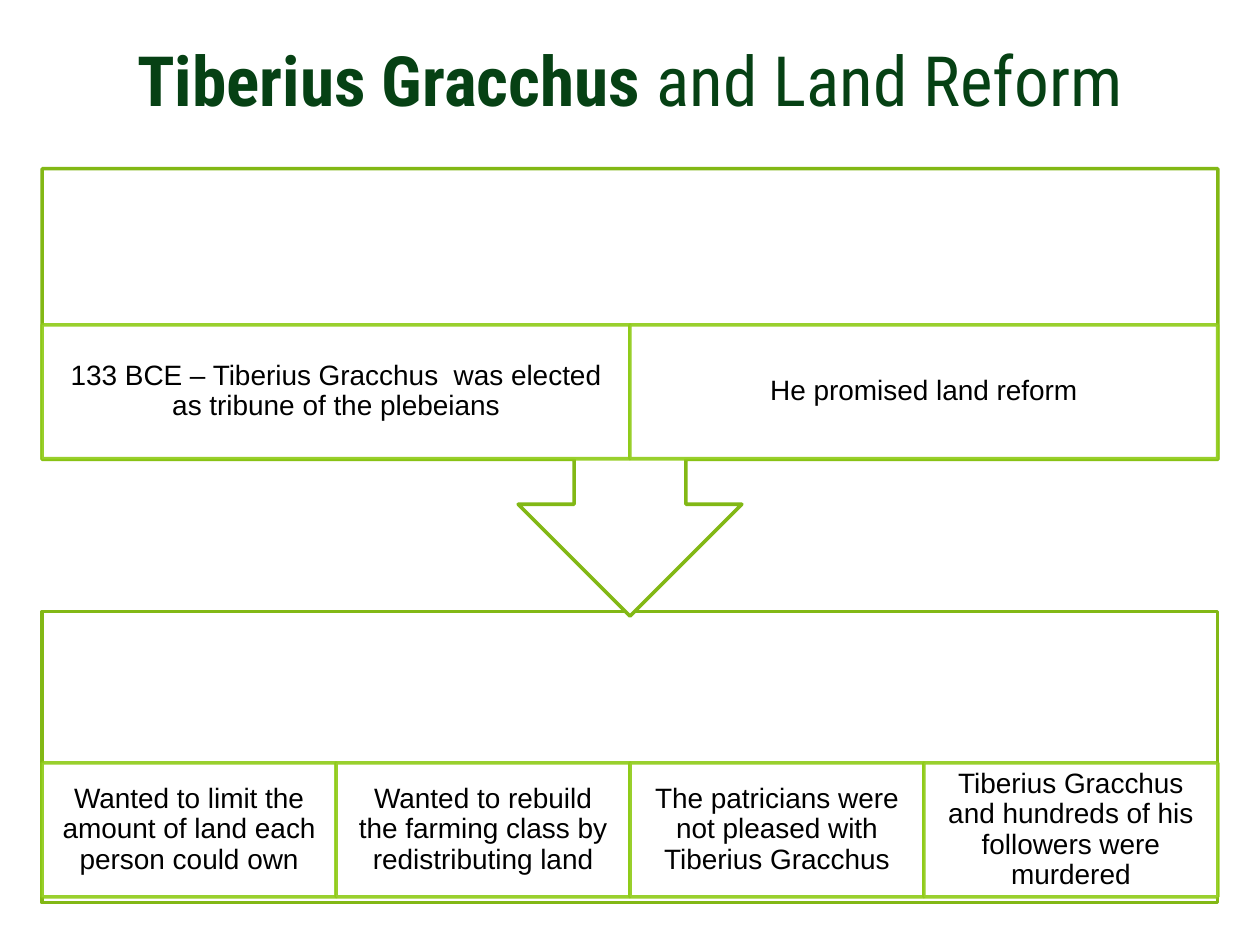
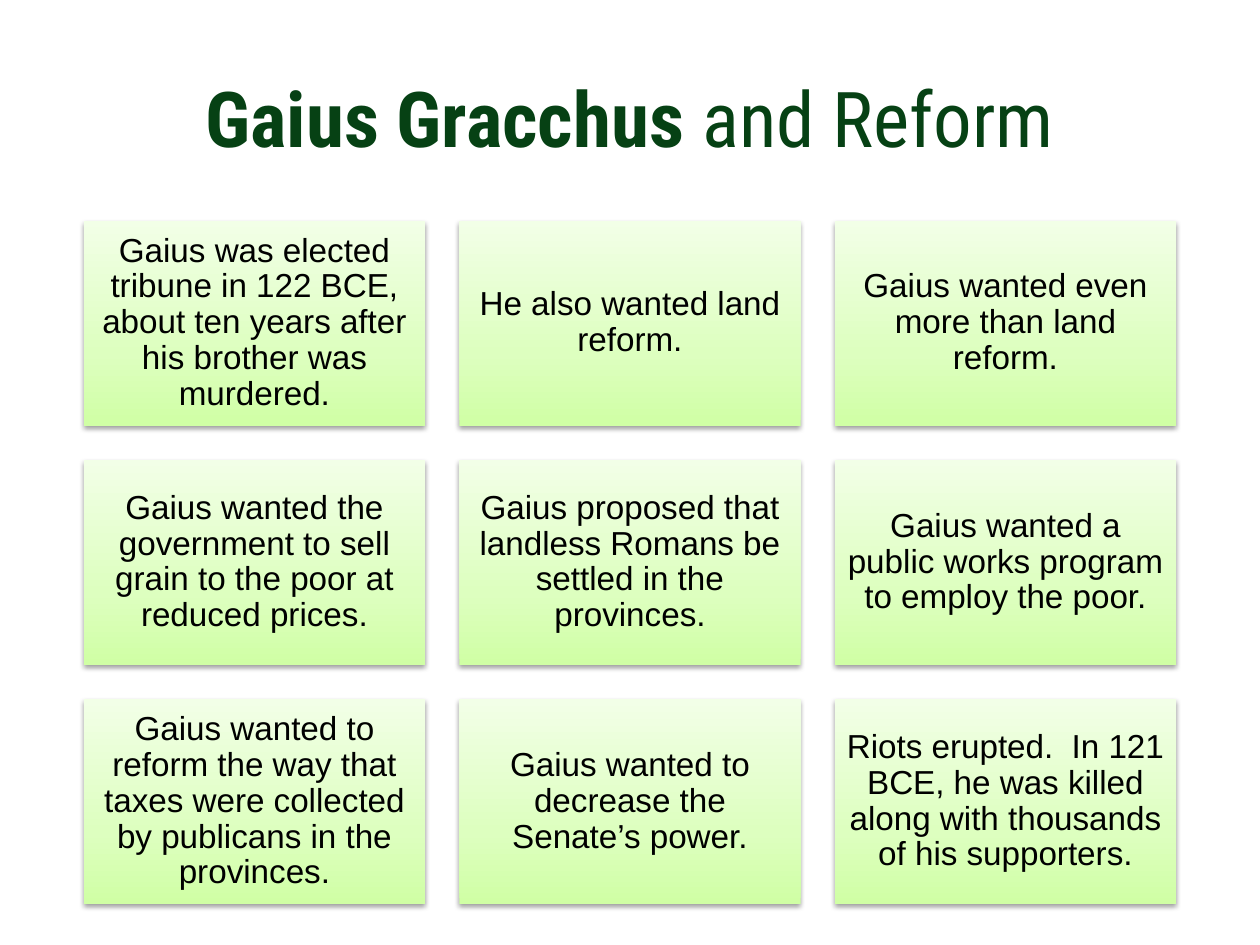
"""Build two slides on the reforms of the Gracchus brothers."""
from lxml.etree import SubElement
from pptx import Presentation
from pptx.dml.color import RGBColor as RGB
from pptx.enum.shapes import MSO_SHAPE as SHAPE
from pptx.enum.text import MSO_ANCHOR as ANCHOR, MSO_AUTO_SIZE as AUTO, PP_ALIGN as ALIGN
from pptx.oxml.ns import qn
from pptx.util import Cm, Pt

COLORS = {
    "title": "064114", "text": "000000", "panel": "FFFFFF",
    "panel_line": "82B815", "cell_line": "8FCB17", "shadow": "000000",
}
CARD_STOPS = [(0, "D0FFA5"), (35, "DDFFBF"), (100, "F2FFE7")]
TITLE_FONT, BODY_FONT = "Roboto Condensed", "Arial"

LAND_TITLE = ("Tiberius Gracchus ", "and Land Reform")
ELECTION = [
    "133 BCE – Tiberius Gracchus  was elected as tribune of the plebeians",
    "He promised land reform",
]
OUTCOME = [
    "Wanted to limit the amount of land each person could own",
    "Wanted to rebuild the farming class by redistributing land",
    "The patricians were not pleased with Tiberius Gracchus",
    "Tiberius Gracchus and hundreds of his followers were murdered",
]
GAIUS_TITLE = ("Gaius Gracchus ", "and Reform")
GAIUS_CARDS = [
    "Gaius was elected tribune in 122 BCE, about ten years after his brother was murdered.",
    "He also wanted land reform.",
    "Gaius wanted even more than land reform.",
    "Gaius wanted the government to sell grain to the poor at reduced prices.",
    "Gaius proposed that landless Romans be settled in the provinces.",
    "Gaius wanted a public works program to employ the poor.",
    "Gaius wanted to reform the way that taxes were collected by publicans in the provinces.",
    "Gaius wanted to decrease the Senate’s power.",
    "Riots erupted.  In 121 BCE, he was killed along with thousands of his supporters.",
]

PANEL_LEFT, PANEL_W, CELL_H = 0.85, 23.7, 2.7
CARD_LEFT, CARD_TOP, CARD_W, CARD_H, CARD_GAP, CARD_COLS = 1.69, 4.45, 6.88, 4.13, 0.69, 3


def add_titled_slide(prs, parts, top, size):
    s = prs.slides.add_slide(prs.slide_layouts[5])
    title = s.shapes.title
    title.left, title.top, title.width, title.height = Cm(1.27), Cm(top), Cm(22.86), Cm(3.18)
    tf = title.text_frame
    tf.auto_size, tf.vertical_anchor = AUTO.NONE, ANCHOR.MIDDLE
    p = tf.paragraphs[0]
    p.alignment = ALIGN.CENTER
    for part, bold in zip(parts, (True, False)):
        r = p.add_run()
        r.text = part
        r.font.name, r.font.size, r.font.bold = TITLE_FONT, Pt(size), bold
        r.font.color.rgb = RGB.from_string(COLORS["title"])
    return s


def add_box(s, kind, left, top, width, height):
    sp = s.shapes.add_shape(kind, Cm(left), Cm(top), Cm(width), Cm(height))
    sp.shadow.inherit = False
    return sp


def outline(sp, line):
    sp.fill.solid()
    sp.fill.fore_color.rgb = RGB.from_string(COLORS["panel"])
    sp.line.color.rgb = RGB.from_string(COLORS[line])
    sp.line.width = Pt(2)


def write(sp, text, size, inset_x, inset_y):
    tf = sp.text_frame
    tf.text = text
    tf.word_wrap, tf.vertical_anchor = True, ANCHOR.MIDDLE
    tf.margin_left = tf.margin_right = Cm(inset_x)
    tf.margin_top = tf.margin_bottom = Cm(inset_y)
    p = tf.paragraphs[0]
    p.alignment, p.line_spacing = ALIGN.CENTER, 0.9
    font = p.runs[0].font
    font.name, font.size = BODY_FONT, Pt(size)
    font.color.rgb = RGB.from_string(COLORS["text"])


def add_panel(s, kind, top, height, cell_top, texts, rotation=0):
    panel = add_box(s, kind, PANEL_LEFT, top, PANEL_W, height)
    panel.rotation = rotation
    outline(panel, "panel_line")
    width = PANEL_W / len(texts)
    for i, text in enumerate(texts):
        cell = add_box(s, SHAPE.RECTANGLE, PANEL_LEFT + i * width, cell_top, width, CELL_H)
        outline(cell, "cell_line")
        for color in cell._element.spPr.iter(qn("a:srgbClr")):
            SubElement(color, qn("a:alpha"), val="90000")
        write(cell, text, 16, 0.3, 0.05)


def style_card(card):
    card.line.fill.background()
    card.fill.gradient()
    card.fill.gradient_angle = 90
    props = card._element.spPr
    stops = props.find(".//" + qn("a:gsLst"))
    for stop in list(stops):
        stops.remove(stop)
    for pos, color in CARD_STOPS:
        stop = SubElement(stops, qn("a:gs"), pos=str(pos * 1000))
        SubElement(stop, qn("a:srgbClr"), val=color)
    shadow = SubElement(props.find(qn("a:effectLst")), qn("a:outerShdw"),
                        blurRad=str(Pt(3.1)), dist=str(Pt(1.6)), dir="5400000", rotWithShape="0")
    color = SubElement(shadow, qn("a:srgbClr"), val=COLORS["shadow"])
    SubElement(color, qn("a:alpha"), val="38000")


def main():
    prs = Presentation()
    prs.slide_width, prs.slide_height = Cm(25.4), Cm(19.05)

    s = add_titled_slide(prs, LAND_TITLE, 0, 39.6)
    add_panel(s, SHAPE.RECTANGLE, 12.33, 5.87, 15.38, OUTCOME)
    add_panel(s, SHAPE.UP_ARROW_CALLOUT, 3.4, 9.02, 6.55, ELECTION, rotation=180)

    s = add_titled_slide(prs, GAIUS_TITLE, 0.76, 44)
    for i, text in enumerate(GAIUS_CARDS):
        row, col = divmod(i, CARD_COLS)
        card = add_box(s, SHAPE.RECTANGLE, CARD_LEFT + col * (CARD_W + CARD_GAP),
                       CARD_TOP + row * (CARD_H + CARD_GAP), CARD_W, CARD_H)
        style_card(card)
        write(card, text, 19, 0.2, 0.2)

    prs.save("out.pptx")


if __name__ == "__main__":
    main()
